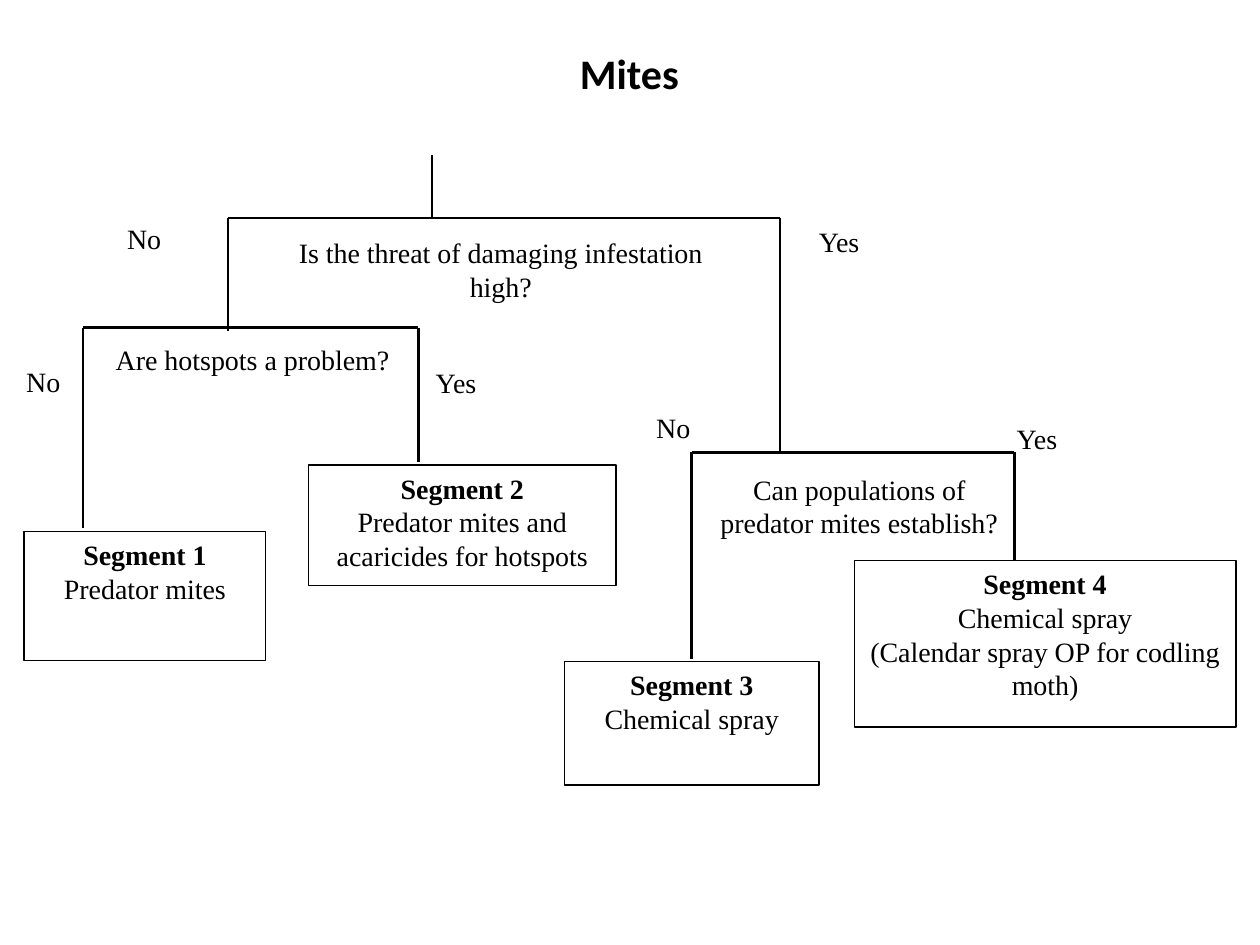
import dataclasses
import pptx
import pptx.dml.color
import pptx.enum.shapes
import pptx.enum.text
import pptx.oxml
import pptx.oxml.ns
import pptx.util

PX = 9144
ALIGN = pptx.enum.text.PP_ALIGN
ANCHOR = pptx.enum.text.MSO_ANCHOR


@dataclasses.dataclass
class Theme:
    ink: str = "000000"
    paper: str = "FFFFFF"
    head: str = "Calibri"
    body: str = "Times New Roman"
    big: int = 24
    size: int = 16
    edge: float = 0.75
    limb: float = 1.5


THEME = Theme()


def color(code):
    return pptx.dml.color.RGBColor.from_string(code)


def scale(box):
    return [n * PX for n in box]


def write(shape, lines, align, font, size, bold=False, anchor=ANCHOR.TOP):
    frame = shape.text_frame
    frame.word_wrap = True
    frame.vertical_anchor = anchor
    frame.text = "\n".join(lines)
    for row, par in enumerate(frame.paragraphs):
        par.alignment = align
        par.font.name = font
        par.font.size = pptx.util.Pt(size)
        par.font.color.rgb = color(THEME.ink)
        par.font.bold = bold and row == 0


def panel(slide, box, lines, align=ALIGN.CENTER, edge=False, bold=False):
    shape = slide.shapes.add_shape(
        pptx.enum.shapes.MSO_SHAPE.RECTANGLE, *scale(box))
    shape.shadow.inherit = False
    shape.fill.solid()
    shape.fill.fore_color.rgb = color(THEME.paper)
    if edge:
        shape.line.color.rgb = color(THEME.ink)
        shape.line.width = pptx.util.Pt(THEME.edge)
    else:
        shape.line.fill.background()
    write(shape, lines, align, THEME.body, THEME.size, bold)


def limb(slide, *ends):
    line = slide.shapes.add_connector(
        pptx.enum.shapes.MSO_CONNECTOR.STRAIGHT, *scale(ends))
    line.line.color.rgb = color(THEME.ink)
    line.line.width = pptx.util.Pt(THEME.limb)
    props = line._element.spPr
    props.append(pptx.oxml.parse_xml(
        "<a:effectLst %s/>" % pptx.oxml.ns.nsdecls("a")))


def title(slide, box, text):
    shape = slide.shapes.add_textbox(*scale(box))
    write(shape, [text], ALIGN.CENTER, THEME.head, THEME.big, True,
          ANCHOR.MIDDLE)


def fork(slide, box, drops, ask, seat, no, yes):
    left, top, width, _ = box
    right = left + width
    x, y, w, h = seat
    panel(slide, (left + x, top + y, w, h), [ask])
    for word, base, (x, y), w in (("No", left, no, 48), ("Yes", right, yes, 63)):
        panel(slide, (base + x, top + y, w, 38), [word], ALIGN.LEFT)
    limb(slide, left, top, right, top)
    for x, drop in zip((left, right), drops):
        limb(slide, x, top, x, top + drop)


def leaf(slide, box, num, lines):
    panel(slide, box, ["Segment %d" % num] + lines, edge=True, bold=True)


def main():
    deck = pptx.Presentation()
    deck.slide_width, deck.slide_height = scale((1000, 750))
    slide = deck.slides.add_slide(deck.slide_layouts[6])

    title(slide, (35, 22, 929, 72), "Mites")
    limb(slide, 343, 123, 343, 173)
    fork(slide, (181, 173, 438, 185), (90, 185),
         "Is the threat of damaging infestation high?",
         (20, 9, 393, 31), (-90, -2), (21, 0))
    fork(slide, (66, 260, 266, 159), (159, 107),
         "Are hotspots a problem?",
         (10, 7, 249, 62), (-55, 24), (4, 25))
    fork(slide, (549, 359, 256, 164), (164, 87),
         "Can populations of predator mites establish?",
         (12, 11, 242, 62), (-38, -38), (-8, -29))

    leaf(slide, (19, 422, 192, 102), 1, ["Predator mites"])
    leaf(slide, (245, 369, 244, 96), 2,
         ["Predator mites and acaricides for hotspots"])
    leaf(slide, (448, 525, 202, 98), 3, ["Chemical spray"])
    leaf(slide, (678, 445, 303, 132), 4,
         ["Chemical spray", "(Calendar spray OP for codling moth)"])
    deck.save("out.pptx")


if __name__ == "__main__":
    main()
